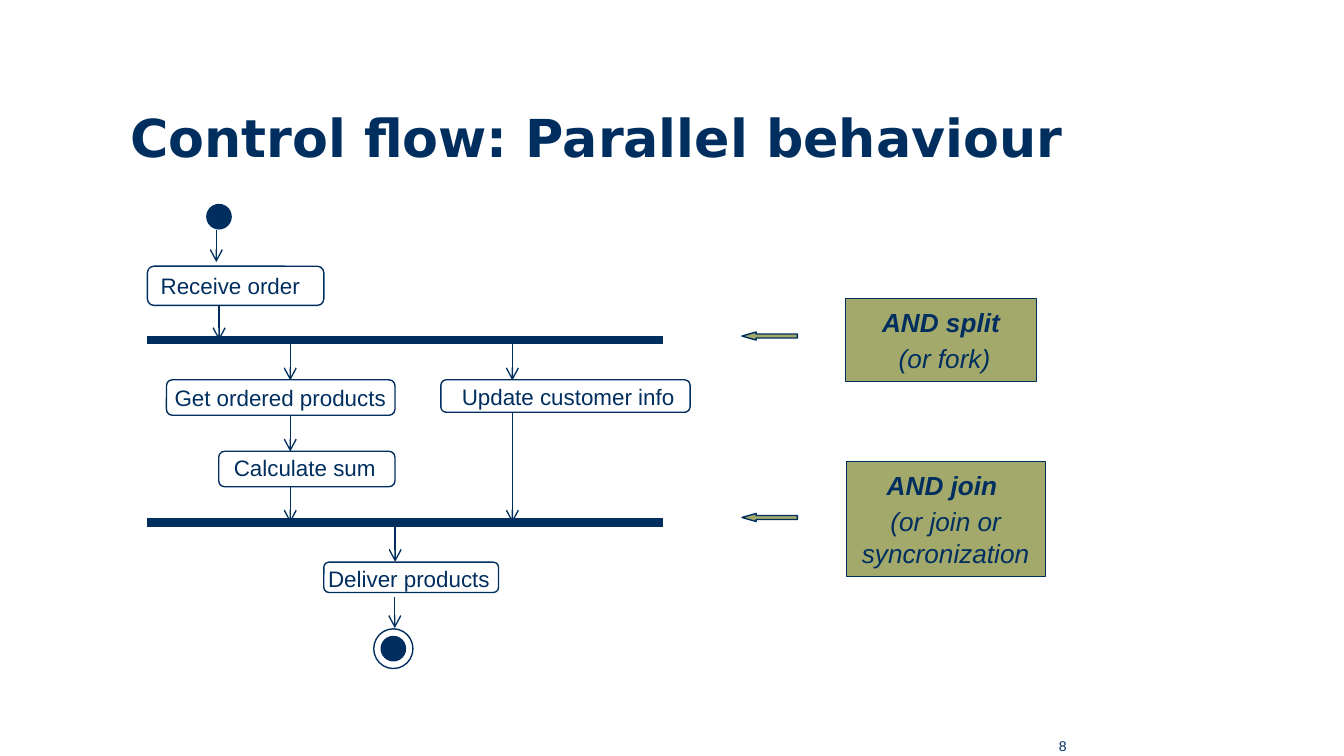
from lxml import etree
from pptx import Presentation
from pptx.dml.color import RGBColor
from pptx.enum.shapes import MSO_CONNECTOR, MSO_SHAPE
from pptx.enum.text import MSO_ANCHOR, PP_ALIGN
from pptx.oxml.ns import qn
from pptx.util import Pt

LINE = MSO_CONNECTOR.STRAIGHT
ROUND = MSO_SHAPE.ROUNDED_RECTANGLE
RECT = MSO_SHAPE.RECTANGLE
OVAL = MSO_SHAPE.OVAL
ARROW = MSO_SHAPE.LEFT_ARROW
LEFT, CENTER = PP_ALIGN.LEFT, PP_ALIGN.CENTER
MIDDLE, TOP = MSO_ANCHOR.MIDDLE, MSO_ANCHOR.TOP

HEX = {"navy": "002F5F", "olive": "A3A86B", "white": "FFFFFF"}
COLOR = {name: RGBColor.from_string(code) for name, code in HEX.items()}


def write(shape, *lines, size=12, font="Arial", bold=False, italic=False,
          align=LEFT, anchor=TOP, space=None, gap=0):
    """Fill a shape with paragraphs; only the first one takes the bold."""
    frame = shape.text_frame
    frame.word_wrap = True
    frame.vertical_anchor = anchor
    for i, text in enumerate(lines):
        para = frame.add_paragraph() if i else frame.paragraphs[0]
        para.alignment = align
        para.line_spacing = space
        para.space_before = Pt(gap if i else 0)
        run = para.add_run()
        run.text = text
        run.font.size = Pt(size)
        run.font.name = font
        run.font.bold = bold and i == 0
        run.font.italic = italic
        run.font.color.rgb = COLOR["navy"]


def draw(shapes, kind, box, fill=None, width=0.75):
    shape = shapes.add_shape(kind, *map(Pt, box))
    shape.shadow.inherit = False
    if fill:
        shape.fill.solid()
        shape.fill.fore_color.rgb = COLOR[fill]
    else:
        shape.fill.background()
    shape.line.color.rgb = COLOR["navy"]
    shape.line.width = Pt(width)
    return shape


deck = Presentation()
deck.slide_width, deck.slide_height = Pt(720), Pt(405)
slide = deck.slides.add_slide(deck.slide_layouts[5])
shapes = slide.shapes

title = shapes.title
title.left, title.top, title.width, title.height = map(Pt, (62.6, 49.7, 539.3, 46.8))
write(title, "Control flow: Parallel behaviour", size=28, font="DejaVu Sans",
      bold=True, anchor=MIDDLE)

page = shapes.add_textbox(Pt(560.2), Pt(391.7), Pt(43.2), Pt(13))
write(page, "8", size=7.5)

# Fork and join bars, then the flows: x, y to x, y, width, arrowhead
fork, join = 182.3, 280
bars = [(79, y, 355, y, 4.5, False) for y in (fork, join)]
flows = [(x, top, x, end, 0.75, True) for x, top, end in (
    (117.4, 161.3, fork),
    (155.5, fork, 203.8),
    (155.5, 220.3, 241.9),
    (155.5, 258.5, join),
    (274.5, fork, 203.8),
    (211.7, join, 301),
    (274.5, 220.3, join),
    (115.9, 123.1, 140.4),
    (211.5, 319.7, 336.5),
)]
for x1, y1, x2, y2, width, head in bars + flows:
    line = shapes.add_connector(LINE, Pt(x1), Pt(y1), Pt(x2), Pt(y2))
    line.line.color.rgb = COLOR["navy"]
    line.line.width = Pt(width)
    if head:
        etree.SubElement(line.line._get_or_add_ln(), qn("a:tailEnd"), type="arrow")
    etree.SubElement(line._element.spPr, qn("a:effectLst"))

# Actions: outline, then the label's left, top and width
actions = [
    ("Receive order", (79, 142.6, 94.5, 21), (79, 147.4, 94.5)),
    ("Get ordered products", (89.2, 203.5, 122.4, 19), (86.4, 207.2, 135.4)),
    ("Update customer info", (236.2, 203.5, 133.5, 17.4), (240.3, 206.9, 135.4)),
    ("Calculate sum", (117.2, 241.8, 94.4, 19), (118.2, 244.9, 123.1)),
    ("Deliver products", (173.5, 301.2, 93.6, 16.2), (168.7, 304.2, 123.1)),
]
for text, box, (left, top, width) in actions:
    draw(shapes, ROUND, box, "white").adjustments[0] = 0.167
    label = shapes.add_textbox(Pt(left), Pt(top), Pt(width), Pt(16))
    write(label, text, space=0.6)

# Notes beside the bars, each with its pointer
notes = [
    (("AND split", " (or fork)"), (453, 160, 102.2, 44.4), 177.9),
    (("AND join ", "(or join or syncronization "), (453.3, 247.3, 106.7, 61.4), 275.1),
]
for lines, box, top in notes:
    note = draw(shapes, RECT, box, "olive", 0.25)
    write(note, *lines, size=14, bold=True, italic=True, align=CENTER,
          anchor=MIDDLE, gap=2.8)
    tip = draw(shapes, ARROW, (397.5, top, 29.7, 4.3), "olive")
    tip.adjustments[0], tip.adjustments[1] = 0.5, 1.76

draw(shapes, OVAL, (110.8, 109.6, 13, 13), "navy")
final = shapes.add_group_shape().shapes
draw(final, OVAL, (204.2, 341, 13, 13), "navy")
draw(final, OVAL, (200.2, 336.9, 21, 21.3))

deck.save("out.pptx")
